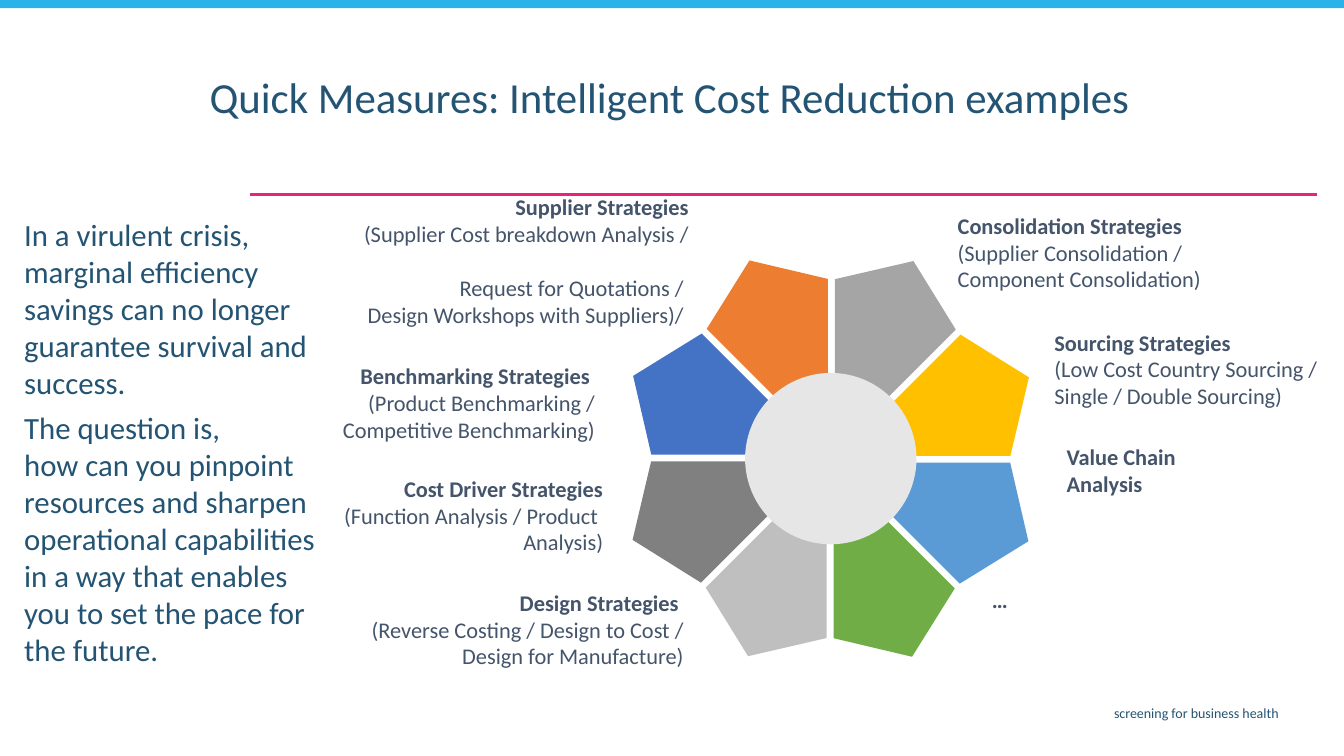
import math
from pptx import Presentation
from pptx import util as u
from pptx.dml.color import RGBColor
from pptx.enum import shapes, text
from pptx.oxml.ns import qn
from lxml import etree

WIDTH, HEIGHT = 13.33, 7.5
FONT = "Calibri"
COLORS = {"bar": "29B3E8", "rule": "EC2179", "heading": "245473",
          "label": "44546A", "hub": "E7E6E6"}

# Petals clockwise, starting right of twelve o'clock
PETAL_COLORS = ["A5A5A5", "FFC000", "5B9BD5", "70AD47",
                "BFBFBF", "808080", "4472C4", "ED7D31"]
# Corners of the first petal, measured from the wheel's centre in wheel radii
PETAL = [(0.02, -0.42), (0.02, -0.89), (0.41, -0.98), (0.62, -0.64), (0.29, -0.31)]
HUB_SHARE = 0.425

# Label boxes (left, top, width, height), side, heading, detail paragraphs
LABELS = [
    ((3.58, 5.78, 3.3, 0.91), "right", "Design Strategies ",
     ["(Reverse Costing / Design to Cost /\vDesign for Manufacture)"]),
    ((9.74, 5.76, 0.35, 0.37), "left", "…", []),
    ((3.47, 2.12, 3.46, 1.18), "right", "Supplier Strategies",
     ["(Supplier Cost breakdown Analysis /",
      "Request for Quotations / \vDesign Workshops with Suppliers)/\u00a0"]),
    ((9.4, 2.04, 2.62, 0.91), "left", "Consolidation Strategies",
     ["(Supplier Consolidation / \vComponent Consolidation)"]),
    ((3.31, 4.65, 2.77, 0.91), "right", "Cost Driver Strategies",
     ["(Function Analysis / Product \vAnalysis)"]),
    ((10.48, 4.61, 1.99, 0.37), "left", "Value Chain\vAnalysis", []),
    ((3.3, 3.53, 2.7, 0.91), "right", "Benchmarking Strategies ",
     ["(Product Benchmarking /\vCompetitive Benchmarking)"]),
    ((10.36, 3.2, 2.87, 0.91), "left", "Sourcing Strategies",
     ["(Low Cost Country Sourcing / \vSingle / Double Sourcing)"]),
]
ALIGN = {"left": text.PP_ALIGN.LEFT, "right": text.PP_ALIGN.RIGHT}


def color(value):
    return RGBColor.from_string(value)


def paint(shape, value):
    shape.fill.solid()
    shape.fill.fore_color.rgb = color(value)
    shape.line.fill.background()
    shape.shadow.inherit = False


def add_frame(page, box, anchor=text.MSO_ANCHOR.TOP, insets=(0.1, 0.05, 0.1, 0.05)):
    frame = page.shapes.add_textbox(*map(u.Inches, box)).text_frame
    frame.word_wrap = True
    frame.vertical_anchor = anchor
    (frame.margin_left, frame.margin_top,
     frame.margin_right, frame.margin_bottom) = map(u.Inches, insets)
    return frame


def next_para(frame, side="left"):
    """Return the empty first paragraph, or a new one."""
    para = frame.paragraphs[0]
    if para.runs:
        para = frame.add_paragraph()
    para.alignment = ALIGN[side]
    return para


def add_words(para, words, size, value, bold=False):
    for index, line in enumerate(words.split("\v")):
        if index:
            para.add_line_break()
        span = para.add_run()
        span.text = line
        span.font.name = FONT
        span.font.size = u.Pt(size)
        span.font.bold = bold
        span.font.color.rgb = color(value)


def add_decoration(page, box):
    left, top, width, height = box
    # Top bar
    bar = page.shapes.add_shape(shapes.MSO_SHAPE.RECTANGLE, u.Inches(left),
                                u.Inches(top), u.Inches(width), u.Inches(0.08))
    paint(bar, COLORS["bar"])
    # Rule below the title
    rule_y = u.Inches(top + 1.93)
    rule = page.shapes.add_connector(
        shapes.MSO_CONNECTOR.STRAIGHT, u.Inches(left + 0.98 * width), rule_y,
        u.Inches(left + 0.186 * width), rule_y)
    rule.line.color.rgb = color(COLORS["rule"])
    rule.line.width = u.Pt(1.5)
    etree.SubElement(rule._element.spPr, qn("a:effectLst"))
    # Footer
    footer = add_frame(page, (left + 3.65, top + height - 0.56, 9.13, 0.29))
    add_words(next_para(footer, "right"), "screening for business health",
              10, COLORS["heading"])


def add_title(page, box):
    para = next_para(add_frame(page, box))
    para.line_spacing = 0.8
    add_words(para, "Quick Measures: Intelligent Cost Reduction examples",
              30.6, COLORS["heading"])


def add_statement(page, box):
    frame = add_frame(page, box, insets=(0.09, 0.04, 0.09, 0.04))
    add_words(next_para(frame),
              "In a virulent crisis, marginal efficiency savings can no longer "
              "guarantee survival and success.", 22, COLORS["heading"])
    para = next_para(frame)
    para.space_before = u.Pt(6)
    add_words(para,
              "The question is, \vhow can you pinpoint resources and sharpen "
              "operational capabilities in a way that enables you to set the "
              "pace for the future.", 22, COLORS["heading"])


def add_wheel(page, box):
    left, top, size, _ = box
    radius = size / 2
    center_x, center_y = left + radius, top + radius
    # Petals: the first one turned in equal steps
    for index, value in enumerate(PETAL_COLORS):
        angle = math.tau * index / len(PETAL_COLORS)
        cos, sin = math.cos(angle), math.sin(angle)
        points = [(u.Inches(center_x + radius * (x * cos - y * sin)),
                   u.Inches(center_y + radius * (x * sin + y * cos)))
                  for x, y in PETAL]
        outline = page.shapes.build_freeform(*points[0], scale=1.0)
        outline.add_line_segments(points[1:], close=True)
        paint(outline.convert_to_shape(), value)
    # Hub
    hub = radius * HUB_SHARE
    disc = page.shapes.add_shape(
        shapes.MSO_SHAPE.OVAL, u.Inches(center_x - hub), u.Inches(center_y - hub),
        u.Inches(2 * hub), u.Inches(2 * hub))
    paint(disc, COLORS["hub"])


def add_label(page, box, side, heading, details):
    # Only the aligned side is inset, so lines keep their breaks
    insets = (0.1, 0.05, 0, 0.05) if side == "left" else (0, 0.05, 0.1, 0.05)
    frame = add_frame(page, box, text.MSO_ANCHOR.BOTTOM, insets)
    add_words(next_para(frame, side), heading, 16, COLORS["label"], bold=True)
    for index, detail in enumerate(details):
        para = next_para(frame, side)
        if index:
            para.space_before = u.Pt(19.5)
        add_words(para, detail, 16, COLORS["label"])


def main():
    deck = Presentation()
    deck.slide_width, deck.slide_height = u.Inches(WIDTH), u.Inches(HEIGHT)
    page = deck.slides.add_slide(deck.slide_layouts[6])
    add_decoration(page, (0, 0, WIDTH, HEIGHT))
    add_title(page, (1.98, 0.75, 9.68, 0.76))
    add_statement(page, (0.15, 2.1, 3.1, 5.07))
    add_wheel(page, (6.24, 2.55, 4, 4))
    for label in LABELS:
        add_label(page, *label)
    deck.save("out.pptx")


if __name__ == "__main__":
    main()
